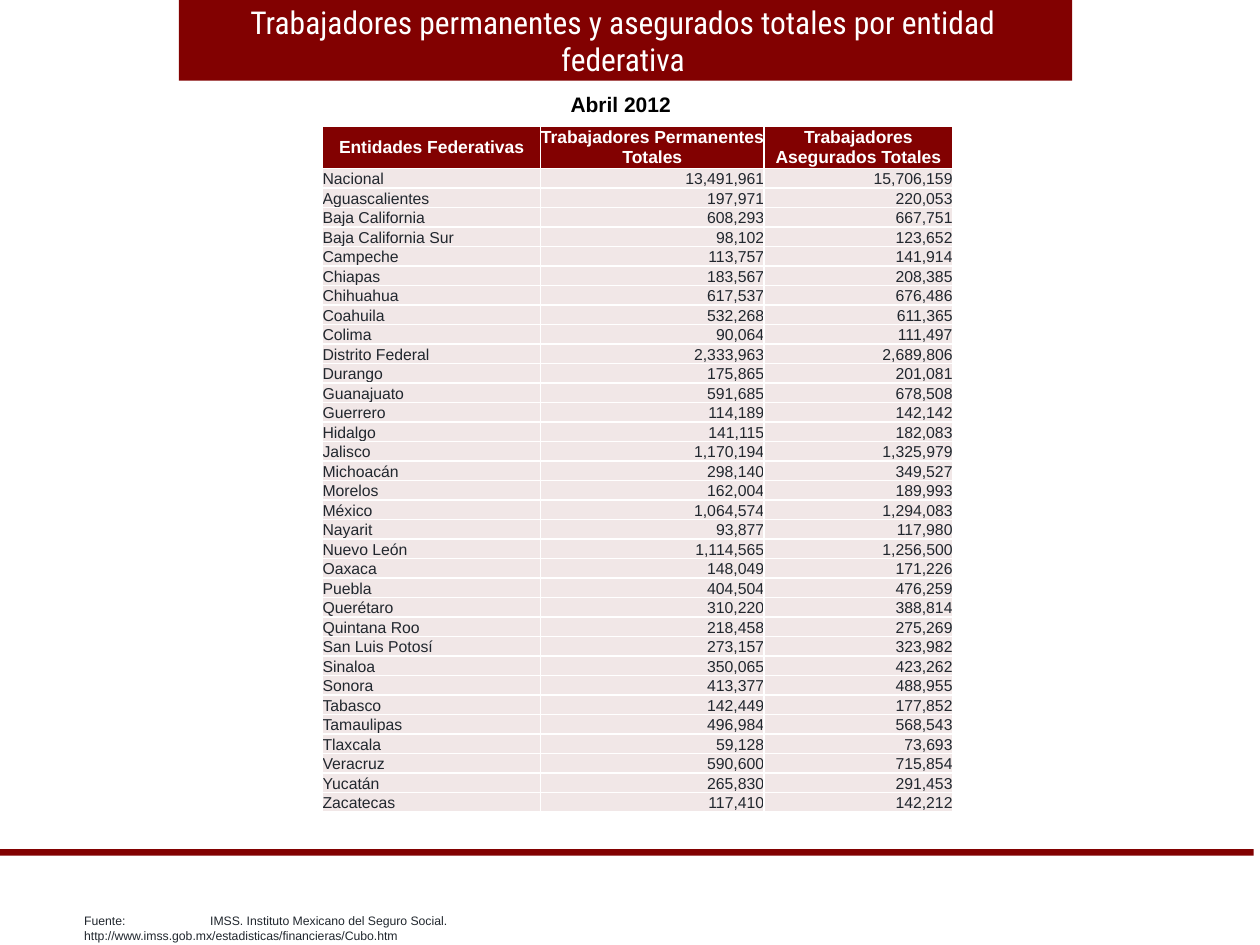
from lxml.etree import SubElement
from pptx import Presentation
from pptx.dml.color import RGBColor
from pptx.enum.shapes import MSO_SHAPE
from pptx.enum.text import MSO_ANCHOR, PP_ALIGN
from pptx.oxml.ns import qn
from pptx.util import Inches, Pt


def color(value):
    return RGBColor.from_string(value)


def write(p, text, size, font, fill, bold=False):
    r = p.add_run()
    r.text = text
    r.font.size = Pt(size)
    r.font.name = font
    r.font.bold = bold
    r.font.color.rgb = color(fill)


WINE, ROSE, WHITE, INK = "820101", "F1E7E7", "FFFFFF", "21272E"
HEADERS = ("Entidades Federativas", "Trabajadores Permanentes Totales", "Trabajadores Asegurados Totales")
WORKERS = [
    ("Nacional", 13491961, 15706159),
    ("Aguascalientes", 197971, 220053),
    ("Baja California", 608293, 667751),
    ("Baja California Sur", 98102, 123652),
    ("Campeche", 113757, 141914),
    ("Chiapas", 183567, 208385),
    ("Chihuahua", 617537, 676486),
    ("Coahuila", 532268, 611365),
    ("Colima", 90064, 111497),
    ("Distrito Federal", 2333963, 2689806),
    ("Durango", 175865, 201081),
    ("Guanajuato", 591685, 678508),
    ("Guerrero", 114189, 142142),
    ("Hidalgo", 141115, 182083),
    ("Jalisco", 1170194, 1325979),
    ("Michoacán", 298140, 349527),
    ("Morelos", 162004, 189993),
    ("México", 1064574, 1294083),
    ("Nayarit", 93877, 117980),
    ("Nuevo León", 1114565, 1256500),
    ("Oaxaca", 148049, 171226),
    ("Puebla", 404504, 476259),
    ("Querétaro", 310220, 388814),
    ("Quintana Roo", 218458, 275269),
    ("San Luis Potosí", 273157, 323982),
    ("Sinaloa", 350065, 423262),
    ("Sonora", 413377, 488955),
    ("Tabasco", 142449, 177852),
    ("Tamaulipas", 496984, 568543),
    ("Tlaxcala", 59128, 73693),
    ("Veracruz", 590600, 715854),
    ("Yucatán", 265830, 291453),
    ("Zacatecas", 117410, 142212),
]
rows = [HEADERS] + [(state, f"{permanent:,}", f"{insured:,}") for state, permanent, insured in WORKERS]

prs = Presentation()
prs.slide_width, prs.slide_height = Inches(10), Inches(7.5)
COL, ROW = prs.slide_width / 100, prs.slide_height / 100
s = prs.slides.add_slide(prs.slide_layouts[5])

for left, top, width, height in [(14.2, 0, 70.9, 8.53), (0, 89.87, 99.5, 0.67)]:
    band = s.shapes.add_shape(MSO_SHAPE.RECTANGLE, int(left * COL), int(top * ROW),
                              int(width * COL), int(height * ROW))
    band.shadow.inherit = False
    band.fill.solid()
    band.fill.fore_color.rgb = color(WINE)
    band.line.fill.background()

title = s.shapes.title
title.left, title.top = int(14.2 * COL), int(-0.4 * ROW)
title.width, title.height = int(70.5 * COL), int(9.47 * ROW)
s.shapes._spTree.append(title._element)
tf = title.text_frame
tf.word_wrap = True
tf.vertical_anchor = MSO_ANCHOR.TOP
p = tf.paragraphs[0]
p.alignment = PP_ALIGN.CENTER
write(p, "Trabajadores permanentes y asegurados totales por entidad federativa", 18, "Roboto Condensed", WHITE)

period = s.shapes.add_textbox(int(44.3 * COL), int(9.07 * ROW), int(10 * COL), int(4 * ROW))
period.text_frame.word_wrap = False
write(period.text_frame.paragraphs[0], "Abril 2012", 12, "Arial", "000000", True)

source = s.shapes.add_textbox(int(5.7 * COL), int(96 * ROW), int(50.8 * COL), int(2.93 * ROW))
source.text_frame.word_wrap = True
p = source.text_frame.paragraphs[0]
tabs = SubElement(p._p.get_or_add_pPr(), qn("a:tabLst"))
SubElement(tabs, qn("a:tab"), pos=str(int(10 * COL)), algn="l")
write(p, "Fuente:\tIMSS. Instituto Mexicano del Seguro Social. "
      "http://www.imss.gob.mx/estadisticas/financieras/Cubo.htm", 7, "Arial", INK)

HEAD_ROWS, TABLE_ROWS = 4.53, 72.67
frame = s.shapes.add_table(len(rows), len(HEADERS), int(25.6 * COL), int(13.33 * ROW),
                           int(50 * COL), int(TABLE_ROWS * ROW))
table = frame.table
table.horz_banding = False
for column, width in zip(table.columns, [17.3, 17.75, 14.95]):
    column.width = int(width * COL)

for i, values in enumerate(rows):
    head = i == 0
    table.rows[i].height = int(ROW * (HEAD_ROWS if head else (TABLE_ROWS - HEAD_ROWS) / len(WORKERS)))
    for j, value in enumerate(values):
        cell = table.cell(i, j)
        cell.margin_left = cell.margin_right = cell.margin_top = cell.margin_bottom = 0
        cell.vertical_anchor = MSO_ANCHOR.MIDDLE if head else MSO_ANCHOR.BOTTOM
        for side in ("L", "R", "T", "B"):
            border = SubElement(cell._tc.get_or_add_tcPr(), qn(f"a:ln{side}"), w=str(Pt(1)))
            SubElement(SubElement(border, qn("a:solidFill")), qn("a:srgbClr"), val=WHITE)
        cell.fill.solid()
        cell.fill.fore_color.rgb = color(WINE if head else ROSE)
        p = cell.text_frame.paragraphs[0]
        p.alignment = PP_ALIGN.CENTER if head else PP_ALIGN.RIGHT if j else PP_ALIGN.LEFT
        write(p, value, 10 if head else 9, "Arial", WHITE if head else INK, head)

prs.save("out.pptx")
